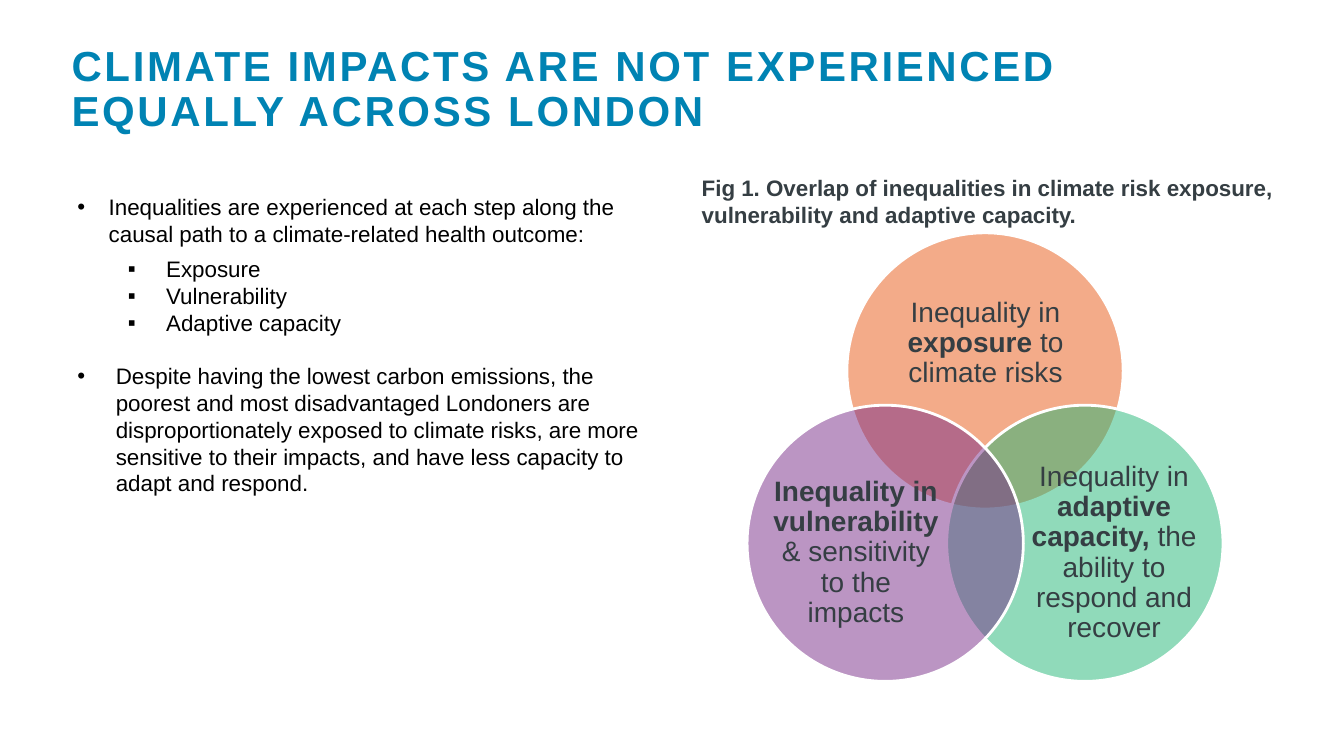
from dataclasses import dataclass
from lxml import etree
from pptx import Presentation
from pptx.dml.color import RGBColor
from pptx.enum.shapes import MSO_SHAPE
from pptx.enum.text import MSO_ANCHOR, PP_ALIGN
from pptx.oxml.ns import qn
from pptx.util import Pt

OVAL = MSO_SHAPE.OVAL
TOP, MIDDLE = MSO_ANCHOR.TOP, MSO_ANCHOR.MIDDLE
LEFT, CENTER = PP_ALIGN.LEFT, PP_ALIGN.CENTER
SCALE = 9144


@dataclass(frozen=True)
class Theme:
    face: str = "Arial"
    blue: str = "0083B3"
    slate: str = "353E43"
    black: str = "000000"
    white: str = "FFFFFF"
    orange: str = "E95814"
    green: str = "23B677"
    purple: str = "792D89"
    title: int = 30
    label: int = 20
    body: int = 16


def px(n):
    return round(n * SCALE)


class Deck:
    def __init__(self, theme):
        self.theme = theme
        self.file = Presentation()
        self.file.slide_width, self.file.slide_height = px(1333), px(750)
        self.slide = self.file.slides.add_slide(self.file.slide_layouts[6])

    def frame(self, box, pads, anchor=TOP):
        frame = self.slide.shapes.add_textbox(*map(px, box)).text_frame
        frame.word_wrap = True
        frame.vertical_anchor = anchor
        (frame.margin_left, frame.margin_top,
         frame.margin_right, frame.margin_bottom) = map(px, pads)
        return frame

    def style(self, para, size, color, bold=None, align=LEFT, lead=1.0):
        font = para.font
        font.name, font.size, font.bold = self.theme.face, Pt(size), bold
        font.color.rgb = RGBColor.from_string(color)
        para.alignment, para.line_spacing = align, lead

    def text(self, box, words, size, color, pads=(0, 0, 0, 0), lead=1.0, track=0):
        para = self.frame(box, pads).paragraphs[0]
        run = para.add_run()
        run.text = words
        self.style(para, size, color, True, lead=lead)
        if track:
            run.font._element.set("spc", str(track))

    def bullets(self, box, items):
        frame = self.frame(box, (10, 5, 10, 5))
        for i, (words, level, mark, left, hang, before, after) in enumerate(items):
            para = frame.add_paragraph() if i else frame.paragraphs[0]
            para.text, para.level = words, level
            self.style(para, self.theme.body, self.theme.black)
            para.space_before, para.space_after = Pt(before), Pt(after)
            props = para._p.get_or_add_pPr()
            props.set("marL", str(px(left)))
            props.set("indent", str(-px(hang)))
            font = etree.Element(qn("a:buFont"), typeface=self.theme.face)
            char = etree.Element(qn("a:buChar"), char=mark)
            at = props.index(props.find(qn("a:defRPr")))
            props[at:at] = [font, char]

    def circle(self, x, y, size, color):
        shape = self.slide.shapes.add_shape(OVAL, *map(px, (x, y, size, size)))
        shape.shadow.inherit = False
        shape.fill.solid()
        shape.fill.fore_color.rgb = RGBColor.from_string(color)
        tint = shape._element.spPr.find(qn("a:solidFill"))[0]
        etree.SubElement(tint, qn("a:alpha"), val="50000")
        shape.line.color.rgb = RGBColor.from_string(self.theme.white)
        shape.line.width = Pt(2)

    def label(self, box, parts):
        para = self.frame(box, (0, 0, 0, 0), MIDDLE).paragraphs[0]
        self.style(para, self.theme.label, self.theme.slate, align=CENTER, lead=0.9)
        for words, bold in parts:
            run = para.add_run()
            run.text, run.font.bold = words, bold


def main():
    theme = Theme()
    deck = Deck(theme)
    deck.text((696, 173, 587, 28),
              "Fig 1. Overlap of inequalities in climate risk exposure, "
              "vulnerability and adaptive capacity.", theme.body, theme.slate)
    deck.text((71, 40, 1208, 101),
              "CLIMATE IMPACTS ARE NOT EXPERIENCED EQUALLY ACROSS LONDON",
              theme.title, theme.blue, (0, 5, 100, 5), 0.9, 190)

    steps = ("Exposure", "Vulnerability", "Adaptive capacity")
    deck.bullets((67, 187, 587, 380), [
        ("Inequalities are experienced at each step along the causal path "
         "to a climate-related health outcome:", 0, "•", 31, 31, 0, 6),
        *[(step, 1, "▪", 88, 38, 0, 0) for step in steps],
        ("Despite having the lowest carbon emissions, the poorest and most "
         "disadvantaged Londoners are disproportionately exposed to climate "
         "risks, are more sensitive to their impacts, and have less capacity "
         "to adapt and respond.", 0, "•", 38, 38, 18.5, 0),
    ])

    size, left, top, shift, drop = 274, 840, 231, 99, 171
    venn = (
        (0, 0, theme.orange, (877, 279, 201, 123),
         (("Inequality in ", False), ("exposure ", True),
          ("to climate risks", False))),
        (1, 1, theme.green, (1023, 473, 164, 151),
         (("Inequality in ", False), ("adaptive capacity, ", True),
          ("the ability to respond and recover", False))),
        (-1, 1, theme.purple, (767, 473, 164, 151),
         (("Inequality in vulnerability ", True),
          ("& sensitivity to the impacts", False))),
    )
    for col, row, color, box, parts in venn:
        deck.circle(left + col * shift, top + row * drop, size, color)
        deck.label(box, parts)
    deck.file.save("out.pptx")


if __name__ == "__main__":
    main()
